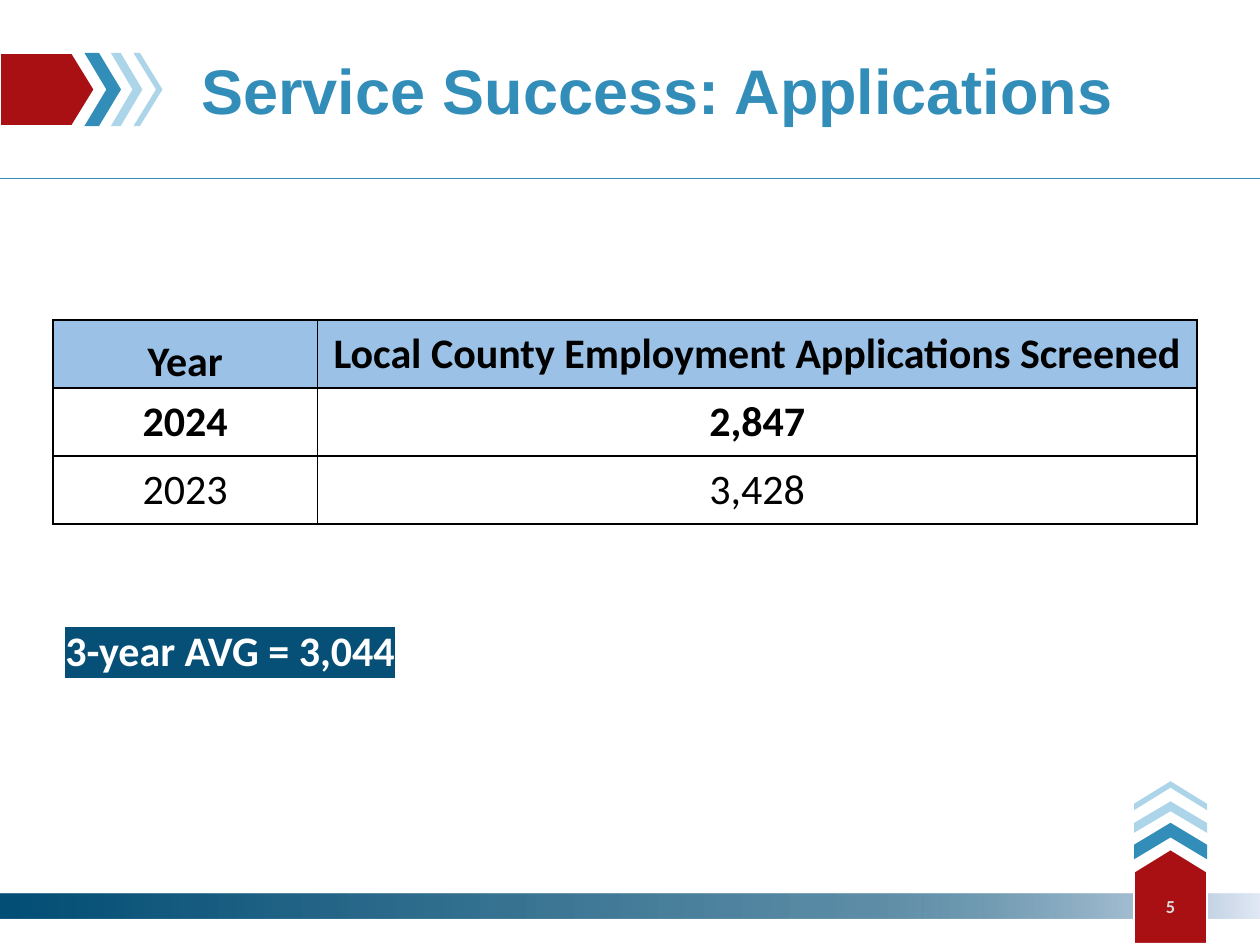
import pptx
import pptx.util
import pptx.dml.color
import pptx.oxml
import pptx.oxml.ns
import pptx.enum.shapes
import pptx.enum.text
from lxml import etree

Inches = pptx.util.Inches
Pt = pptx.util.Pt
SHAPE = pptx.enum.shapes.MSO_SHAPE
ALIGN = pptx.enum.text.PP_ALIGN
ANCHOR = pptx.enum.text.MSO_ANCHOR
NAMESPACE = pptx.oxml.ns.nsdecls("a")

RED, BLUE, PALE_BLUE, NAVY = "A81013", "328DB9", "ADD5E9", "064F77"
WHITE, BLACK, GRAY, HEADER_BLUE = "FFFFFF", "000000", "D9D9D9", "9BC2E6"


def color(value):
    return pptx.dml.color.RGBColor.from_string(value)


def style_font(font, name, size, value, bold):
    font.name, font.size, font.bold = name, Pt(size), bold
    font.color.rgb = color(value)


def add_shape(page, kind, box, adjustment, fill):
    shape = page.shapes.add_shape(kind, *map(Inches, box))
    shape.shadow.inherit = False
    shape.adjustments[0] = adjustment
    shape.fill.solid()
    shape.fill.fore_color.rgb = color(fill)
    shape.line.fill.background()
    return shape


def add_text(page, box, text, name, size, value, align=ALIGN.LEFT, anchor=ANCHOR.MIDDLE):
    frame = page.shapes.add_textbox(*map(Inches, box)).text_frame
    frame.word_wrap = True
    frame.vertical_anchor = anchor
    para = frame.paragraphs[0]
    para.text = text
    para.alignment = align
    style_font(para.font, name, size, value, True)
    return para


def add_arrow_strip(page, box, upward=False):
    """A red pentagon followed by three chevrons, pointing right or up."""
    left, top, width, height = box
    parts = [  # kind, offset, length, adjustment, fill
        (SHAPE.PENTAGON, 0, 0.75, 0.307, RED),
        (SHAPE.CHEVRON, 0.67, 0.29, 0.601, BLUE),
        (SHAPE.CHEVRON, 0.88, 0.25, 0.688, PALE_BLUE),
        (SHAPE.CHEVRON, 1.06, 0.23, 0.776, PALE_BLUE),
    ]
    for kind, offset, length, adjustment, fill in parts:
        if upward:
            x = left + (width - length) / 2
            y = top + height - offset - (length + width) / 2
            place = (x, y, length, width)
        else:
            place = (left + offset, top, length, height)
        shape = add_shape(page, kind, place, adjustment, fill)
        shape.rotation = 270 if upward else 0
        if kind == SHAPE.PENTAGON:
            shape.line.color.rgb = color(WHITE)
            shape.line.width = Pt(1)


def add_footer_bar(page, box):
    bar = add_shape(page, SHAPE.PENTAGON, box, 0, NAVY)
    properties = bar.fill._xPr
    solid = properties.find(pptx.oxml.ns.qn("a:solidFill"))
    gradient = pptx.oxml.parse_xml(
        f'<a:gradFill {NAMESPACE} rotWithShape="1"><a:gsLst>'
        '<a:gs pos="0"><a:srgbClr val="034E75"/></a:gs>'
        '<a:gs pos="70000"><a:srgbClr val="034E75"><a:alpha val="63000"/></a:srgbClr></a:gs>'
        '<a:gs pos="100000"><a:srgbClr val="E1E8F5"/></a:gs>'
        '</a:gsLst><a:lin ang="0" scaled="0"/></a:gradFill>')
    properties.replace(solid, gradient)


def add_header(page, box):
    left, top, width, height = box
    add_arrow_strip(page, (left, top + 0.42, 1.29, 0.58))
    bottom = Inches(top + height)
    rule = page.shapes.add_connector(pptx.enum.shapes.MSO_CONNECTOR.STRAIGHT,
                                     Inches(left), bottom, Inches(left + width), bottom)
    rule.line.color.rgb = color(BLUE)
    rule.line.width = Pt(0.5)
    etree.SubElement(rule._element.spPr, pptx.oxml.ns.qn("a:effectLst"))
    add_text(page, (left + 1.5, top + 0.08, 8, 1.25),
             "Service Success: Applications", "Arial", 36, BLUE)


def add_borders(cell):
    properties = cell._tc.get_or_add_tcPr()
    for side in ("lnL", "lnR", "lnT", "lnB"):
        properties.append(pptx.oxml.parse_xml(
            f'<a:{side} {NAMESPACE} w="12700"><a:solidFill>'
            f'<a:srgbClr val="{BLACK}"/></a:solidFill></a:{side}>'))


def add_applications_table(page, box):
    rows = [
        ("Year", "Local County Employment Applications Screened"),
        ("2024", "2,847"),
        ("2023", "3,428"),
    ]
    table = page.shapes.add_table(len(rows), 2, *map(Inches, box)).table
    table.first_row = table.horz_banding = False
    table.columns[0].width = Inches(2.1)
    table.columns[1].width = Inches(box[2] - 2.1)
    for r, row in enumerate(rows):
        for c, text in enumerate(row):
            cell = table.cell(r, c)
            cell.margin_left = cell.margin_right = cell.margin_top = Inches(0.01)
            cell.margin_bottom = 0
            cell.vertical_anchor = ANCHOR.BOTTOM if r == c == 0 else ANCHOR.MIDDLE
            add_borders(cell)
            if r == 0:
                cell.fill.solid()
                cell.fill.fore_color.rgb = color(HEADER_BLUE)
            else:
                cell.fill.background()
            para = cell.text_frame.paragraphs[0]
            para.text = text
            para.alignment = ALIGN.CENTER
            style_font(para.font, "Calibri", 24, BLACK, r < 2)


def add_average(page, box):
    para = add_text(page, box, "3-year AVG = 3,044", "Calibri", 24, WHITE, anchor=ANCHOR.TOP)
    # Highlight belongs to the run, between its fill and its typeface
    span = para.runs[0]
    style_font(span.font, "Calibri", 24, WHITE, True)
    fill = span.font._element.find(pptx.oxml.ns.qn("a:solidFill"))
    fill.addnext(pptx.oxml.parse_xml(
        f'<a:highlight {NAMESPACE}><a:srgbClr val="{NAVY}"/></a:highlight>'))


def main():
    deck = pptx.Presentation()
    deck.slide_width, deck.slide_height = Inches(10), Inches(7.5)
    page = deck.slides.add_slide(deck.slide_layouts[6])

    # Footer
    add_footer_bar(page, (-0.02, 7.09, 10.02, 0.2))
    add_arrow_strip(page, (9, 6.2, 0.58, 1.29), upward=True)
    add_text(page, (9, 6.99, 0.58, 0.4), "5", "Calibri", 10.5, GRAY, ALIGN.CENTER)

    # Header and content
    add_header(page, (0, 0, 10, 1.42))
    add_applications_table(page, (0.42, 2.54, 9.08, 1.62))
    add_average(page, (0.42, 4.91, 5.15, 0.91))
    deck.save("out.pptx")


if __name__ == "__main__":
    main()
